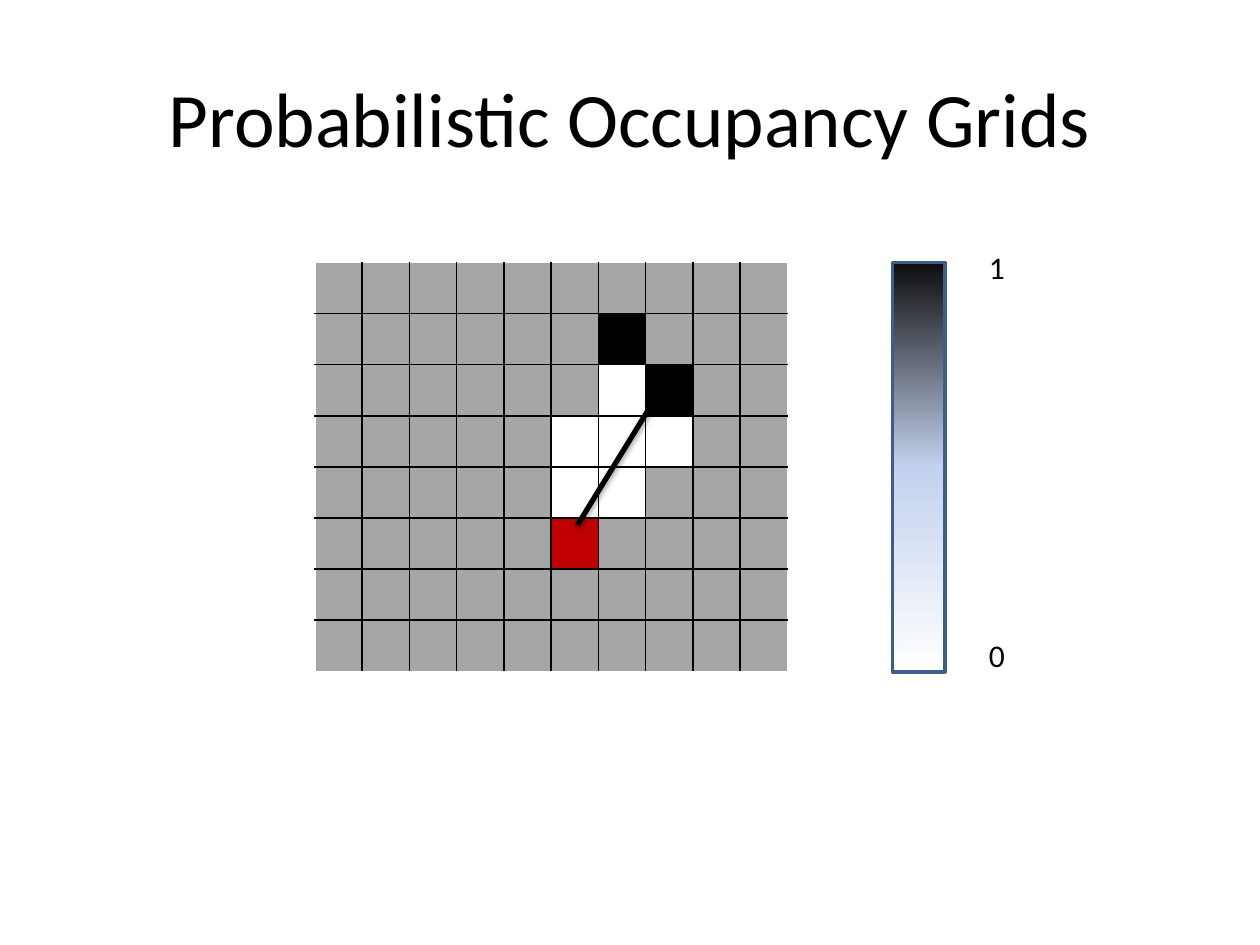
"""Build a slide showing a probabilistic occupancy grid with its scale."""
import copy
import pptx
import pptx.chart.data
import pptx.dml.color
import pptx.enum.shapes
import pptx.enum.text
import pptx.oxml
import pptx.oxml.ns
import pptx.util

Pt = pptx.util.Pt
RGB = pptx.dml.color.RGBColor.from_string
qn = pptx.oxml.ns.qn
NS = pptx.oxml.ns.nsdecls("a")

THEME = {
    "font": "Calibri", "title": 44, "label": 18,
    "ink": "000000", "edge": "3A5F8C",
    "cells": {".": "A6A6A6", "#": "000000", "o": "FFFFFF", "R": "C00000"},
    "scale": [(0, "0D0D0D"), (0.5, "C2D1ED"), (1, "FFFFFF")],
}
TITLE = "Probabilistic Occupancy Grids"
GRID = [
    "..........",
    "......#...",
    "......o#..",
    ".....ooo..",
    ".....oo...",
    ".....R....",
    "..........",
    "..........",
]
LABELS = [("0", 360), ("1", 138)]
LEFT, TOP, WIDE, HIGH = 180, 150, 27, 29.2
BAR = (510, 150, 30, 234)
RAY = (330, 300, 378, 222)


def add_text(slide, text, box, size):
    shape = slide.shapes.add_textbox(*map(Pt, box))
    para = shape.text_frame.paragraphs[0]
    para.text = text
    para.font.name = THEME["font"]
    para.font.size = Pt(size)
    para.font.color.rgb = RGB(THEME["ink"])
    return shape.text_frame


def add_title(slide):
    frame = add_text(slide, TITLE, (36, 21.6, 648, 90), THEME["title"])
    frame.word_wrap = True
    frame.vertical_anchor = pptx.enum.text.MSO_ANCHOR.MIDDLE
    frame.paragraphs[0].alignment = pptx.enum.text.PP_ALIGN.CENTER


def add_border(cell, side):
    cell._tc.get_or_add_tcPr().append(pptx.oxml.parse_xml(
        f'<a:{side} {NS} w="12700"><a:solidFill><a:srgbClr val="{THEME["ink"]}"/>'
        f'</a:solidFill></a:{side}>'))


def add_grid(slide):
    rows, cols = len(GRID), len(GRID[0])
    table = slide.shapes.add_table(
        rows, cols, Pt(LEFT), Pt(TOP), Pt(WIDE * cols), Pt(HIGH * rows)).table
    table.first_row = table.horz_banding = False
    for col in table.columns:
        col.width = Pt(WIDE)
    for row in table.rows:
        row.height = Pt(HIGH)
    for r, line in enumerate(GRID):
        for c, mark in enumerate(line):
            cell = table.cell(r, c)
            inner = {"lnL": c > 0, "lnR": c < cols - 1,
                     "lnT": r > 0, "lnB": r < rows - 1}
            for side, drawn in inner.items():
                if drawn:
                    add_border(cell, side)
            cell.fill.solid()
            cell.fill.fore_color.rgb = RGB(THEME["cells"][mark])


def add_scale(slide):
    bar = slide.shapes.add_shape(
        pptx.enum.shapes.MSO_SHAPE.RECTANGLE, *map(Pt, BAR))
    bar.shadow.inherit = False
    bar.line.color.rgb = RGB(THEME["edge"])
    bar.line.width = Pt(2)
    bar.fill.gradient()
    bar.fill.gradient_angle = 270
    stops = bar._element.spPr.find(qn("a:gradFill")).find(qn("a:gsLst"))
    stops.append(copy.deepcopy(stops[0]))
    for stop, (place, color) in zip(bar.fill.gradient_stops, THEME["scale"]):
        stop.position = place
        stop.color.rgb = RGB(color)
    for text, top in LABELS:
        frame = add_text(slide, text, (558, top, 23.8, 29), THEME["label"])
        frame.word_wrap = False
        frame.auto_size = pptx.enum.text.MSO_AUTO_SIZE.SHAPE_TO_FIT_TEXT


def add_ray(slide):
    ray = slide.shapes.add_connector(
        pptx.enum.shapes.MSO_CONNECTOR.STRAIGHT, *map(Pt, RAY))
    ray.line.color.rgb = RGB(THEME["ink"])
    ray.line.width = Pt(3)
    ray.line._get_or_add_ln().append(
        pptx.oxml.parse_xml(f'<a:tailEnd {NS} type="arrow"/>'))
    ray._element.spPr.append(pptx.oxml.parse_xml(
        f'<a:effectLst {NS}><a:outerShdw blurRad="{Pt(3.1)}" dist="{Pt(1.8)}" '
        f'dir="5400000" rotWithShape="0"><a:srgbClr val="{THEME["ink"]}">'
        '<a:alpha val="35000"/></a:srgbClr></a:outerShdw></a:effectLst>'))


def main():
    deck = pptx.Presentation()
    deck.slide_width, deck.slide_height = Pt(720), Pt(540)
    slide = deck.slides.add_slide(deck.slide_layouts[6])
    for draw in (add_title, add_grid, add_scale, add_ray):
        draw(slide)
    deck.save("out.pptx")


if __name__ == "__main__":
    main()
